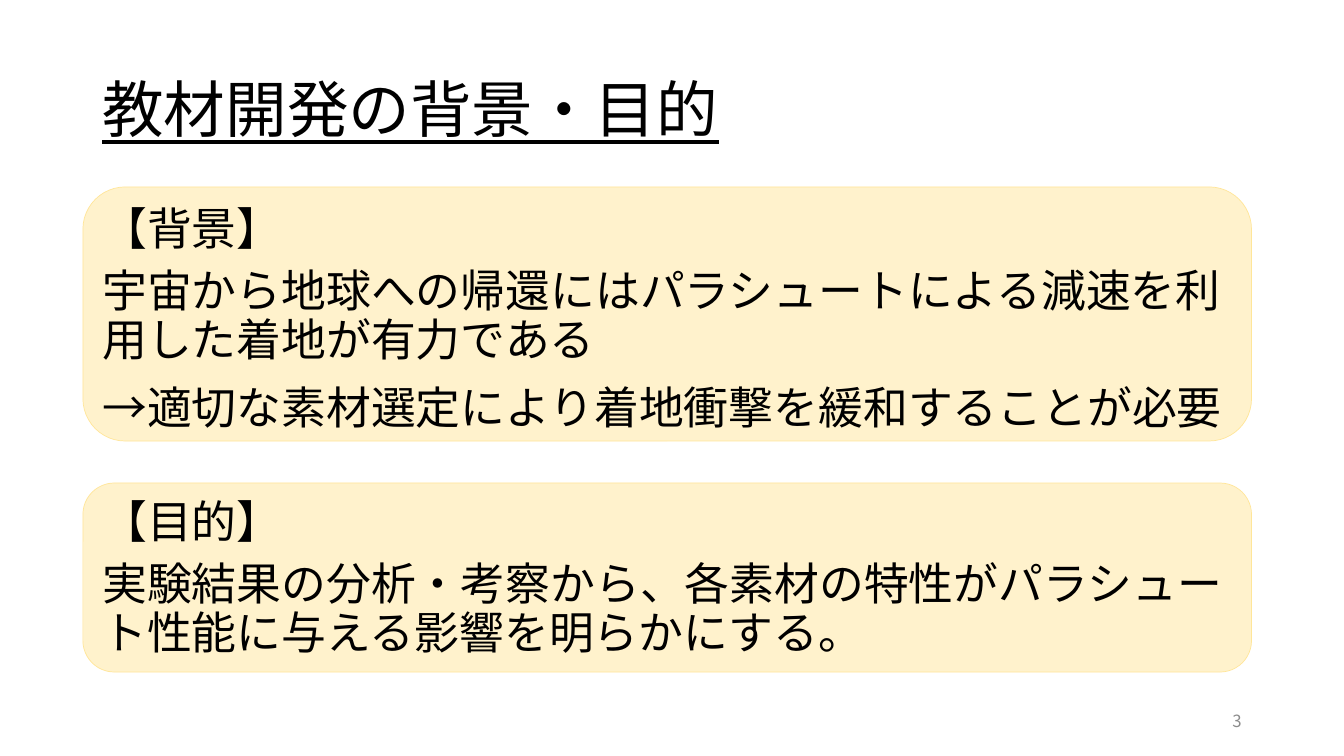
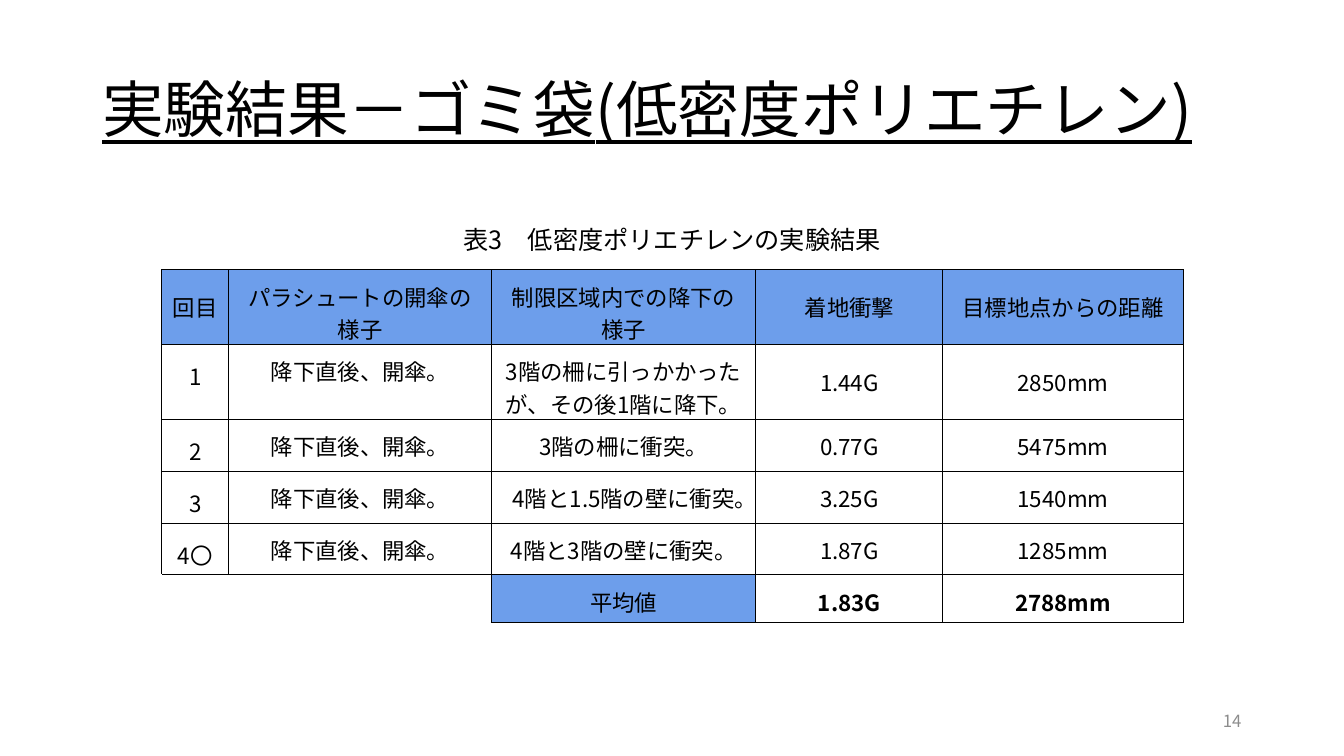
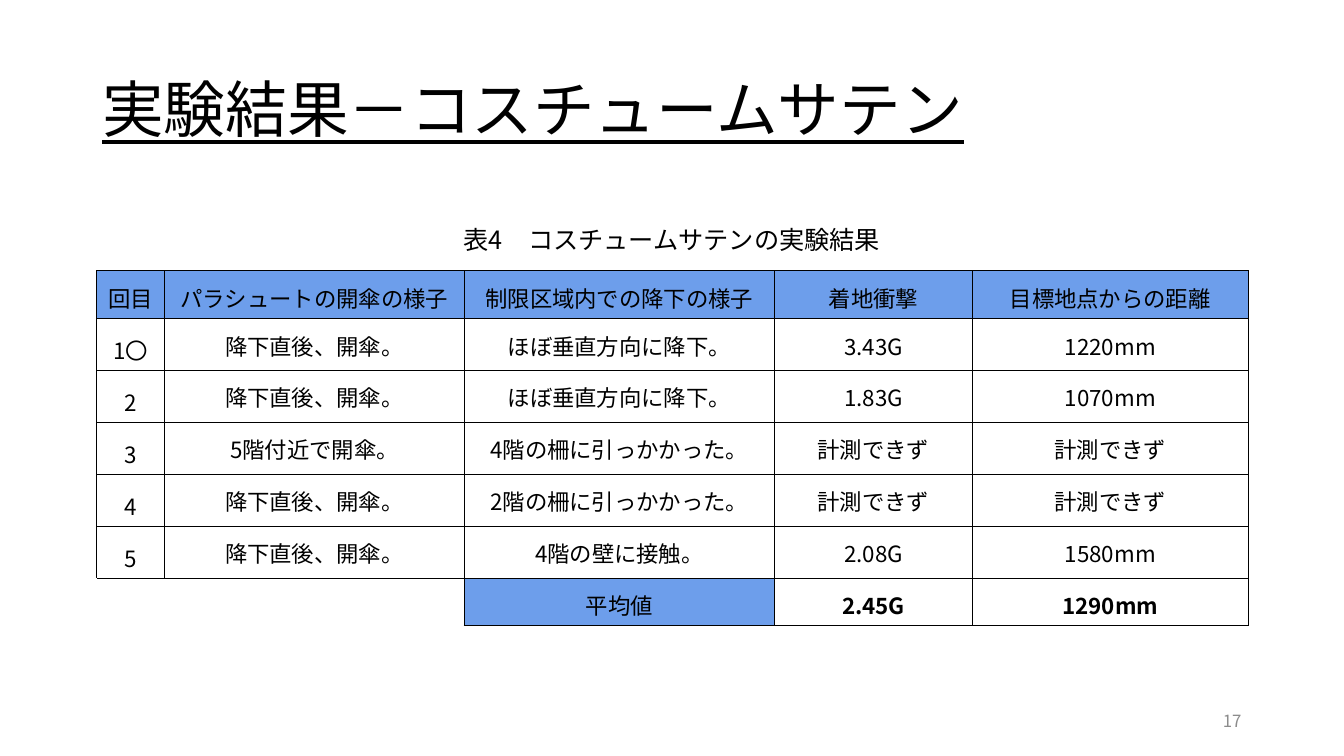
from dataclasses import dataclass
from typing import Optional

from lxml.etree import SubElement
from pptx import Presentation
from pptx.dml.color import RGBColor
from pptx.enum.lang import MSO_LANGUAGE_ID as Language
from pptx.enum.shapes import MSO_SHAPE as Shape
from pptx.enum.text import MSO_ANCHOR as Anchor, MSO_AUTO_SIZE as AutoSize, PP_ALIGN as Align
from pptx.oxml.ns import qn
from pptx.util import Emu, Pt


@dataclass(frozen=True)
class Theme:
    font: str = "Noto Sans CJK JP"
    ink: str = "000000"
    paper: str = "FFFFFF"
    muted: str = "8C8C8C"
    panel: str = "FFF2CC"
    panel_line: str = "FFE699"
    header: str = "6D9EEB"
    title_size: int = 44
    body_size: int = 32
    caption_size: int = 18
    cell_size: int = 16
    number_size: int = 12
    panel_line_width: float = 0.5
    border_width: float = 0.75


@dataclass(frozen=True)
class Box:
    left: int
    top: int
    width: int
    height: int

    def emu(self) -> tuple:
        return tuple(px(n) for n in (self.left, self.top, self.width, self.height))


@dataclass(frozen=True)
class Para:
    text: str
    size: int
    color: str = "000000"
    bold: bool = False
    underline: bool = False
    align: Align = Align.LEFT
    line_spacing: Optional[float] = None
    space_before: int = 0


@dataclass(frozen=True)
class Panel:
    frame: Box
    text_box: Box
    paras: tuple


@dataclass(frozen=True)
class ResultPage:
    title: str
    number: int
    caption: str
    left: int
    top: int
    columns: tuple
    row_heights: tuple
    trials: tuple
    averages: tuple


THEME = Theme()
EMU_PER_PX = 9525
CELL_INSET = 10
BORDER_TAGS = ("a:lnL", "a:lnR", "a:lnT", "a:lnB")
OPEN_BORDERS = ("a:lnL", "a:lnB")
MIDDLE_COLUMNS = (3, 4)
HEADINGS = ("回目", "パラシュートの開傘の様子", "制限区域内での降下の様子",
            "着地衝撃", "目標地点からの距離")
OPENED = "降下直後、開傘。"
STRAIGHT = "ほぼ垂直方向に降下。"
UNMEASURED = "計測できず"

TITLE_BOX = Box(88, 38, 1104, 139)
NUMBER_BOX = Box(904, 667, 288, 38)
CAPTION_BOX = Box(381, 209, 518, 38)


def px(count: int) -> Emu:
    return Emu(count * EMU_PER_PX)


def rgb(color: str) -> RGBColor:
    return RGBColor.from_string(color)


def write(frame, paras: tuple) -> None:
    for index, para in enumerate(paras):
        target = frame.paragraphs[0] if index == 0 else frame.add_paragraph()
        layout = {"alignment": para.align, "line_spacing": para.line_spacing,
                  "space_before": Pt(para.space_before if index else 0)}
        for name, value in layout.items():
            setattr(target, name, value)
        span = target.add_run()
        span.text = para.text
        formats = {"size": Pt(para.size), "bold": para.bold, "underline": para.underline,
                   "language_id": Language.JAPANESE, "name": THEME.font}
        for name, value in formats.items():
            setattr(span.font, name, value)
        span.font.color.rgb = rgb(para.color)
        SubElement(span.font._element, qn("a:ea"), typeface=THEME.font)


def add_text(page, box: Box, paras: tuple, anchor: Anchor = Anchor.TOP,
             auto_size: AutoSize = AutoSize.NONE) -> None:
    frame = page.shapes.add_textbox(*box.emu()).text_frame
    settings = {"word_wrap": True, "auto_size": auto_size, "vertical_anchor": anchor}
    for name, value in settings.items():
        setattr(frame, name, value)
    write(frame, paras)


def add_page(deck, title: str, number: int):
    """Add a blank page with the shared title and page number."""
    page = deck.slides.add_slide(deck.slide_layouts[6])
    add_text(page, TITLE_BOX,
             (Para(title, THEME.title_size, underline=True, line_spacing=0.9),), Anchor.MIDDLE)
    add_text(page, NUMBER_BOX,
             (Para(str(number), THEME.number_size, THEME.muted, align=Align.RIGHT),),
             Anchor.MIDDLE)
    return page


def body_para(text: str, line_spacing: Optional[float] = 0.9) -> Para:
    return Para(text, THEME.body_size, line_spacing=line_spacing, space_before=10)


def add_panel(page, panel: Panel) -> None:
    shape = page.shapes.add_shape(Shape.ROUNDED_RECTANGLE, *panel.frame.emu())
    shape.shadow.inherit = False
    shape.fill.solid()
    shape.fill.fore_color.rgb = rgb(THEME.panel)
    shape.line.color.rgb = rgb(THEME.panel_line)
    shape.line.width = Pt(THEME.panel_line_width)
    add_text(page, panel.text_box, panel.paras)


def set_borders(cell, open_corner: bool) -> None:
    """Draw black edges; an open corner has its left and bottom edges in paper colour."""
    properties = cell._tc.get_or_add_tcPr()
    for tag in BORDER_TAGS:
        color = THEME.paper if open_corner and tag in OPEN_BORDERS else THEME.ink
        line = SubElement(properties, qn(tag), w=str(Pt(THEME.border_width)))
        fill = SubElement(line, qn("a:solidFill"))
        SubElement(fill, qn("a:srgbClr"), val=color)


def fill_cell(cell, para: Para, shaded: bool, anchor: Anchor) -> None:
    set_borders(cell, open_corner=not para.text)
    if shaded:
        cell.fill.solid()
        cell.fill.fore_color.rgb = rgb(THEME.header)
    else:
        cell.fill.background()
    if para.text:
        cell.vertical_anchor = anchor
        for side in ("left", "right", "top", "bottom"):
            setattr(cell, f"margin_{side}", px(CELL_INSET))
        write(cell.text_frame, (para,))


def add_results(page, result: ResultPage) -> None:
    rows = (HEADINGS, *result.trials, ("", "", "平均値", *result.averages))
    last = len(rows) - 1
    box = Box(result.left, result.top, sum(result.columns), sum(result.row_heights))
    table = page.shapes.add_table(len(rows), len(HEADINGS), *box.emu()).table
    table.first_row = table.horz_banding = False
    for column, width in zip(table.columns, result.columns):
        column.width = px(width)
    for row, height in zip(table.rows, result.row_heights):
        row.height = px(height)
    for r, texts in enumerate(rows):
        for c, text in enumerate(texts):
            para = Para(text, THEME.cell_size, align=Align.CENTER,
                        bold=r == last and c in MIDDLE_COLUMNS,
                        line_spacing=1.15 if c == 0 and r > 0 else None)
            middle = r == 0 or c in MIDDLE_COLUMNS
            fill_cell(table.cell(r, c), para, shaded=r == 0 or (r == last and c == 2),
                      anchor=Anchor.MIDDLE if middle else Anchor.TOP)
    table.cell(last, 0).merge(table.cell(last, 1))


def add_result_page(deck, result: ResultPage) -> None:
    page = add_page(deck, result.title, result.number)
    add_text(page, CAPTION_BOX,
             (Para(result.caption, THEME.caption_size, align=Align.CENTER),),
             auto_size=AutoSize.SHAPE_TO_FIT_TEXT)
    add_results(page, result)


PANELS = (
    Panel(Box(79, 178, 1113, 242), Box(88, 192, 1104, 228), (
        body_para("【背景】"),
        body_para("宇宙から地球への帰還にはパラシュートによる減速を利用した着地が有力である"),
        body_para("→適切な素材選定により着地衝撃を緩和することが必要", None))),
    Panel(Box(79, 460, 1113, 180), Box(88, 471, 1104, 168), (
        body_para("【目的】"),
        body_para("実験結果の分析・考察から、各素材の特性がパラシュート性能に与える影響を明らかにする。"))),
)

RESULTS = (
    ResultPage(
        "実験結果－ゴミ袋(低密度ポリエチレン)", 14, "表3　低密度ポリエチレンの実験結果",
        154, 257, (64, 250, 252, 178, 229), (70, 70, 48, 48, 48, 44),
        (("1", OPENED, "3階の柵に引っかかったが、その後1階に降下。", "1.44G", "2850mm"),
         ("2", OPENED, "3階の柵に衝突。", "0.77G", "5475mm"),
         ("3", OPENED, "4階と1.5階の壁に衝突。", "3.25G", "1540mm"),
         ("4〇", OPENED, "4階と3階の壁に衝突。", "1.87G", "1285mm")),
        ("1.83G", "2788mm")),
    ResultPage(
        "実験結果－コスチュームサテン", 17, "表4　コスチュームサテンの実験結果",
        92, 258, (65, 285, 296, 188, 263), (44, 48, 48, 48, 48, 48, 44),
        (("1〇", OPENED, STRAIGHT, "3.43G", "1220mm"),
         ("2", OPENED, STRAIGHT, "1.83G", "1070mm"),
         ("3", "5階付近で開傘。", "4階の柵に引っかかった。", UNMEASURED, UNMEASURED),
         ("4", OPENED, "2階の柵に引っかかった。", UNMEASURED, UNMEASURED),
         ("5", OPENED, "4階の壁に接触。", "2.08G", "1580mm")),
        ("2.45G", "1290mm")),
)


def main() -> None:
    deck = Presentation()
    deck.slide_width, deck.slide_height = px(1280), px(720)
    purpose_page = add_page(deck, "教材開発の背景・目的", 3)
    for panel in PANELS:
        add_panel(purpose_page, panel)
    for result in RESULTS:
        add_result_page(deck, result)
    deck.save("out.pptx")


if __name__ == "__main__":
    main()
